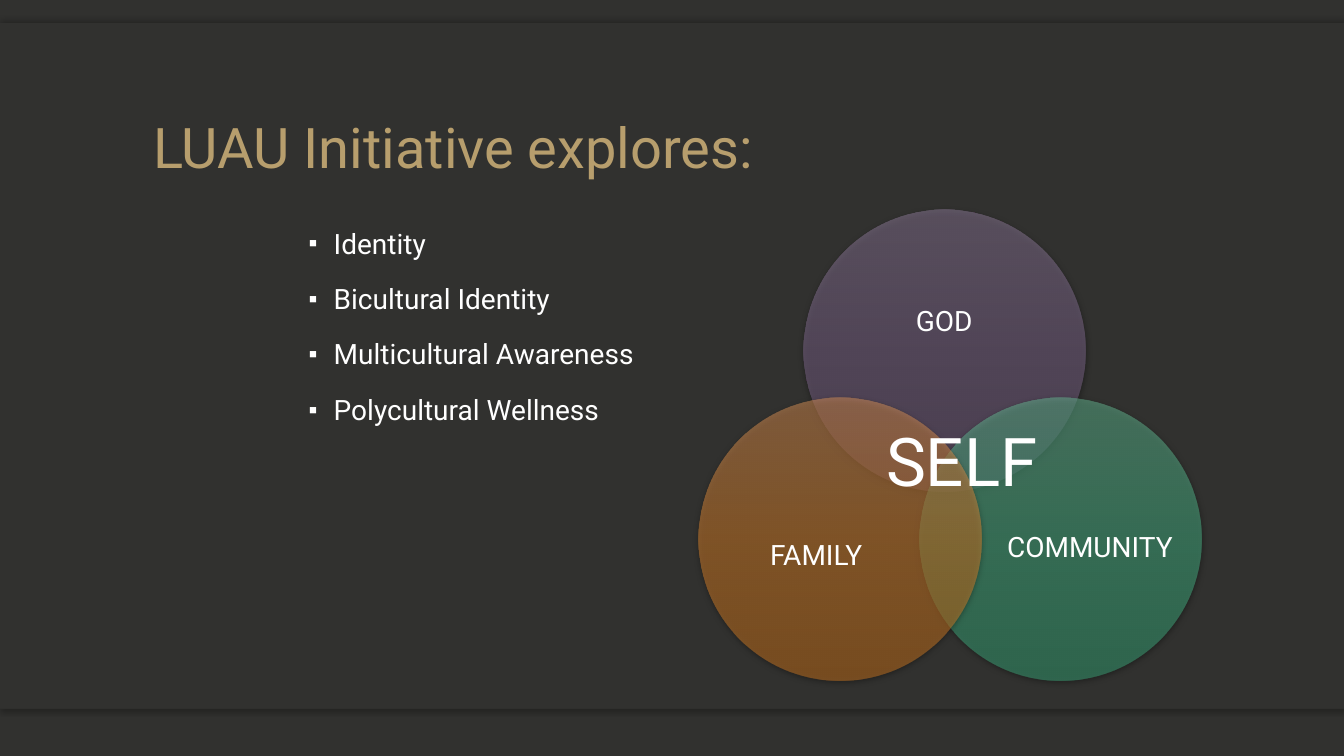
"""Build the LUAU Initiative slide with its three-circle diagram."""
from pptx import Presentation
from pptx.dml.color import RGBColor
from pptx.enum import shapes, text
from pptx.oxml import parse_xml
from pptx.oxml.ns import nsdecls, qn
from pptx.util import Inches, Pt

FONT, BG, WHITE, GOLD = "Roboto", "31312F", "FFFFFF", "B79E6D"
TITLE = "LUAU Initiative explores:"
TOPICS = ["Identity", "Bicultural Identity", "Multicultural Awareness",
          "Polycultural Wellness"]
BANDS = [((0, 6.54, 13.33, 0.49), (25, 4, 2, 90)),
         ((0, 0.23, 13.33, 0.49), (25, 4, 2, 270)),
         ((0, 0.23, 13.33, 6.8), None)]
DIAMETER = 2.8
CIRCLE_SHADOW = (63, 4.5, 1.5, 90)
CIRCLES = [
    ((7.97, 2.08), ("907D9B", "826A90", "745D81"),
     "GOD", (8.34, 2.57, 2.05, 1.26), (0, 0)),
    ((9.12, 3.95), ("69BB96", "4BB88A", "3DA97B"),
     "COMMUNITY", (9.97, 4.67, 1.68, 1.54), (0, 0)),
    ((6.93, 3.95), ("DB945A", "DD862F", "CD7721"),
     "FAMILY", (7.19, 4.67, 1.68, 1.54), (0.13, 0.16)),
]


def color(value):
    return RGBColor.from_string(value)


def inches(box):
    return [Inches(v) for v in box]


def place(sp, box):
    sp.left, sp.top, sp.width, sp.height = inches(box)


def add_run(p, words, size, value=WHITE):
    r = p.add_run()
    r.text = words
    r.font.name, r.font.size = FONT, Pt(size)
    r.font.color.rgb = color(value)


def add_plain(parent, kind, box, fill, shadow):
    sp = parent.add_shape(kind, *inches(box))
    sp.fill.solid()
    sp.fill.fore_color.rgb = color(fill)
    sp.line.fill.background()
    sp.shadow.inherit = False
    if shadow:
        alpha, blur, dist, angle = shadow
        sp._element.spPr.find(qn("a:effectLst")).append(parse_xml(
            f'<a:outerShdw {nsdecls("a")} blurRad="{Pt(blur)}" dist="{Pt(dist)}" '
            f'dir="{angle * 60000}" algn="ctr" rotWithShape="0"><a:srgbClr val="000000">'
            f'<a:alpha val="{alpha * 1000}"/></a:srgbClr></a:outerShdw>'))
    return sp


def set_gradient(sp, stops):
    gs = "".join(
        f'<a:gs pos="{i * 50000}"><a:srgbClr val="{c}"><a:alpha val="50000"/>'
        f'</a:srgbClr></a:gs>' for i, c in enumerate(stops))
    spPr = sp._element.spPr
    spPr.replace(spPr.find(qn("a:solidFill")), parse_xml(
        f'<a:gradFill {nsdecls("a")} rotWithShape="1"><a:gsLst>{gs}</a:gsLst>'
        f'<a:lin ang="5400000" scaled="0"/></a:gradFill>'))


def add_bullet(p):
    pPr = p._p.get_or_add_pPr()
    pPr.set("marL", str(Inches(0.25)))
    pPr.set("indent", str(Inches(-0.25)))
    pPr.append(parse_xml(f'<a:buSzPct {nsdecls("a")} val="90000"/>'))
    pPr.append(parse_xml(f'<a:buChar {nsdecls("a")} char="▪"/>'))


def add_bands(s):
    for i, (box, shadow) in enumerate(BANDS):
        sp = add_plain(s.shapes, shapes.MSO_SHAPE.RECTANGLE, box, BG, shadow)
        s.shapes._spTree.insert(2 + i, sp._element)


def add_title(s):
    sp = s.shapes.title
    place(sp, (1.42, 0.46, 10.5, 1.38))
    tf = sp.text_frame
    tf.auto_size = text.MSO_AUTO_SIZE.NONE
    tf.vertical_anchor = text.MSO_ANCHOR.BOTTOM
    p = tf.paragraphs[0]
    p.alignment, p.line_spacing = text.PP_ALIGN.LEFT, 0.9
    add_run(p, TITLE, 40, GOLD)


def add_topics(s):
    sp = s.placeholders[1]
    place(sp, (2.96, 2.23, 5, 4.67))
    tf = sp.text_frame
    tf.auto_size = text.MSO_AUTO_SIZE.NONE
    for i, topic in enumerate(TOPICS):
        p = tf.add_paragraph() if i else tf.paragraphs[0]
        add_bullet(p)
        p.line_spacing = 0.9
        p.space_before = Pt(18 if i else 0)
        add_run(p, topic, 20)


def add_diagram(s):
    group = s.shapes.add_group_shape().shapes
    for corner, stops, label, box, (left, top) in CIRCLES:
        circle = add_plain(group, shapes.MSO_SHAPE.OVAL,
                           (*corner, DIAMETER, DIAMETER), stops[1], CIRCLE_SHADOW)
        set_gradient(circle, stops)
        tf = group.add_textbox(*inches(box)).text_frame
        tf.word_wrap = True
        tf.vertical_anchor = text.MSO_ANCHOR.MIDDLE
        tf.margin_left, tf.margin_top = Inches(left), Inches(top)
        tf.margin_right = tf.margin_bottom = 0
        p = tf.paragraphs[0]
        p.alignment, p.line_spacing = text.PP_ALIGN.CENTER, 0.9
        add_run(p, label, 20)
    tf = s.shapes.add_textbox(*inches((8.69, 4.11, 1.78, 0.91))).text_frame
    tf.word_wrap = True
    tf.auto_size = text.MSO_AUTO_SIZE.SHAPE_TO_FIT_TEXT
    add_run(tf.paragraphs[0], "SELF", 48)


def main():
    prs = Presentation()
    prs.slide_width, prs.slide_height = Inches(13.33), Inches(7.5)
    s = prs.slides.add_slide(prs.slide_layouts[1])
    s.background.fill.solid()
    s.background.fill.fore_color.rgb = color(BG)
    add_bands(s)
    add_title(s)
    add_topics(s)
    add_diagram(s)
    prs.save("out.pptx")


if __name__ == "__main__":
    main()
